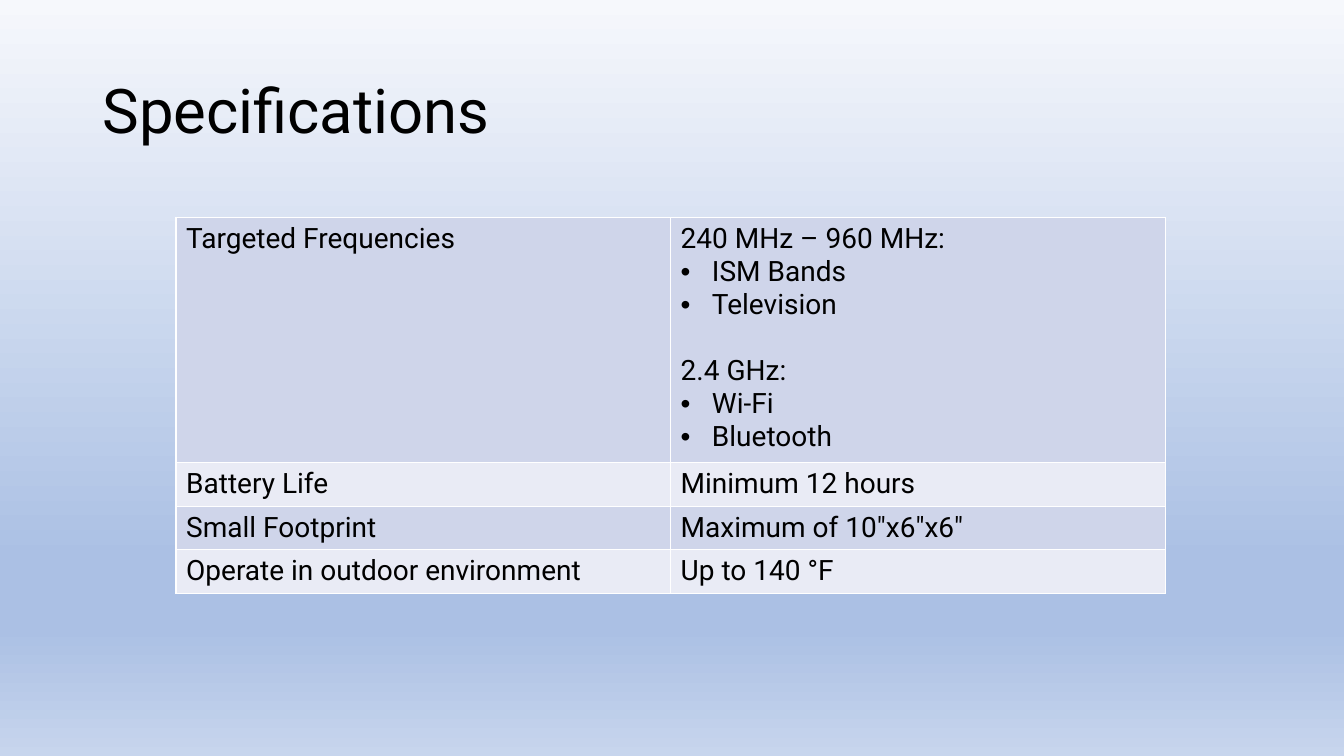
from dataclasses import dataclass

from lxml.etree import SubElement
from pptx import Presentation
from pptx.dml.color import RGBColor
from pptx.enum.text import MSO_ANCHOR
from pptx.oxml import parse_xml
from pptx.oxml.ns import nsdecls, qn
from pptx.util import Inches, Pt


@dataclass(frozen=True)
class Theme:
    font: str = "Roboto"
    ink: str = "000000"
    border: str = "FFFFFF"
    bands: tuple = ("CFD5EA", "E9EBF5")
    sky: tuple = ((0, "F6F8FC"), (74, "ABC0E4"), (83, "ABC0E4"), (100, "C7D5ED"))
    heading_size: int = 44
    body_size: int = 20
    group_gap: float = 23.5


@dataclass(frozen=True)
class Box:
    left: float
    top: float
    width: float
    height: float

    def emu(self):
        return [Inches(n) for n in (self.left, self.top, self.width, self.height)]


THEME = Theme()
SLIDE = Box(0, 0, 13.33, 7.5)
BULLET = "• "
INDENT = Inches(0.31)
ROW_HEIGHTS = (2.38, 0.43, 0.43, 0.43)
SPECIFICATIONS = (
    (
        ("Targeted Frequencies",),
        (
            "240 MHz – 960 MHz:",
            "• ISM Bands",
            "• Television",
            "2.4 GHz:",
            "• Wi-Fi",
            "• Bluetooth",
        ),
    ),
    (("Battery Life",), ("Minimum 12 hours",)),
    (("Small Footprint",), ('Maximum of 10"x6"x6"',)),
    (("Operate in outdoor environment",), ("Up to 140 °F",)),
)


def share(box, left, top, width, height):
    return Box(
        box.left + left * box.width,
        box.top + top * box.height,
        width * box.width,
        height * box.height,
    )


def add_text(paragraph, wording, size):
    run = paragraph.add_run()
    run.text = wording
    run.font.name = THEME.font
    run.font.size = Pt(size)
    run.font.color.rgb = RGBColor.from_string(THEME.ink)


def paint_sky(slide):
    fill = slide.background.fill
    fill.gradient()
    fill.gradient_angle = 270
    stops = slide.element.find(".//" + qn("a:gsLst"))
    for stop in list(stops):
        stops.remove(stop)
    for percent, color in THEME.sky:
        stop = SubElement(stops, qn("a:gs"), pos=str(percent * 1000))
        SubElement(stop, qn("a:srgbClr"), val=color)


def add_heading(slide, box, wording):
    frame = slide.shapes.add_textbox(*box.emu()).text_frame
    frame.word_wrap = True
    frame.vertical_anchor = MSO_ANCHOR.MIDDLE
    frame.paragraphs[0].line_spacing = 0.9
    add_text(frame.paragraphs[0], wording, THEME.heading_size)


def add_bullet(paragraph):
    properties = paragraph._p.get_or_add_pPr()
    properties.set("marL", str(INDENT))
    properties.set("indent", str(-INDENT))
    SubElement(properties, qn("a:buFont"), typeface="Arial")
    SubElement(properties, qn("a:buChar"), char=BULLET.strip())


def write_cell(cell, lines):
    for index, line in enumerate(lines):
        frame = cell.text_frame
        paragraph = frame.add_paragraph() if index else frame.paragraphs[0]
        if line.startswith(BULLET):
            add_bullet(paragraph)
        elif index:
            paragraph.space_before = Pt(THEME.group_gap)
        add_text(paragraph, line.removeprefix(BULLET), THEME.body_size)


def style_cell(cell, color):
    cell.fill.solid()
    cell.fill.fore_color.rgb = RGBColor.from_string(color)
    properties = cell._tc.get_or_add_tcPr()
    for position, side in enumerate("LRTB"):
        border = parse_xml(
            f'<a:ln{side} {nsdecls("a")} w="{Pt(1)}"><a:solidFill>'
            f'<a:srgbClr val="{THEME.border}"/></a:solidFill></a:ln{side}>'
        )
        properties.insert(position, border)


def add_specifications(slide, box, rows):
    columns = len(rows[0])
    table = slide.shapes.add_table(len(rows), columns, *box.emu()).table
    table.first_row = False
    table.horz_banding = False
    for column in table.columns:
        column.width = Inches(box.width / columns)
    for index, entries in enumerate(rows):
        table.rows[index].height = Inches(
            box.height * ROW_HEIGHTS[index] / sum(ROW_HEIGHTS)
        )
        for cell, lines in zip(table.rows[index].cells, entries):
            write_cell(cell, lines)
            style_cell(cell, THEME.bands[index % len(THEME.bands)])


def main():
    presentation = Presentation()
    presentation.slide_width = Inches(SLIDE.width)
    presentation.slide_height = Inches(SLIDE.height)
    slide = presentation.slides.add_slide(presentation.slide_layouts[6])
    paint_sky(slide)
    add_heading(slide, share(SLIDE, 0.069, 0.053, 0.863, 0.193), "Specifications")
    add_specifications(
        slide, share(SLIDE, 0.131, 0.288, 0.736, 0.489), SPECIFICATIONS
    )
    presentation.save("out.pptx")


if __name__ == "__main__":
    main()
